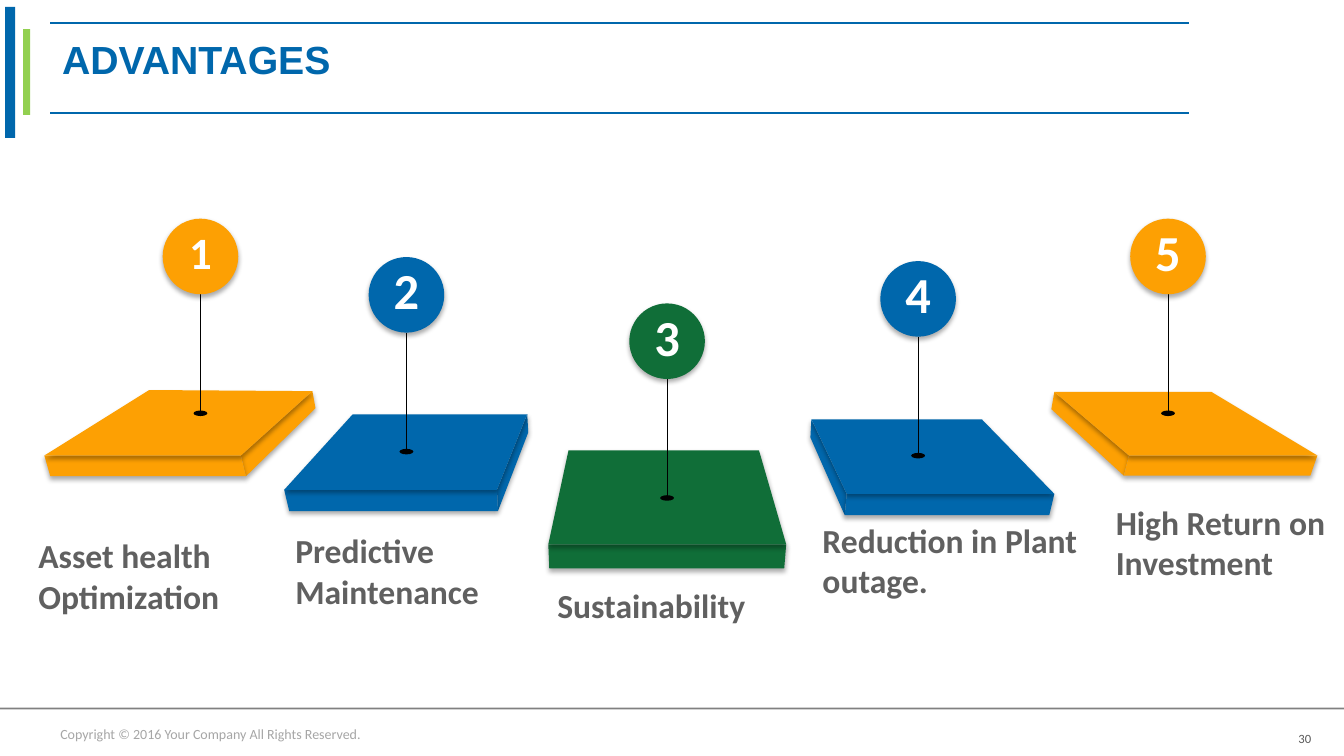
"""Builds a slide with five numbered steps that show the advantages."""
from dataclasses import dataclass

from lxml import etree
from pptx import Presentation
from pptx import util as u
from pptx.dml.color import RGBColor
from pptx.enum import shapes, text
from pptx.oxml import ns

BLUE = RGBColor(0x00, 0x67, 0xAC)
ORANGE = RGBColor(0xFD, 0xA0, 0x03)
GREEN = RGBColor(0x10, 0x6E, 0x38)
LIME = RGBColor(0x92, 0xD0, 0x50)
BLACK = RGBColor(0x00, 0x00, 0x00)
WHITE = RGBColor(0xFF, 0xFF, 0xFF)
RULE_GREY = RGBColor(0x80, 0x80, 0x80)
LABEL_GREY = RGBColor(0x60, 0x60, 0x60)
NUMBER_GREY = RGBColor(0x59, 0x59, 0x59)
FOOTER_GREY = RGBColor(0xA6, 0xA6, 0xA6)

BALL = 54
PIN = 85
LABEL_HEIGHT = 67
LABEL_INSETS = (19.4, 3.6, 5, 5)
EDGES = ((1, 2), (0, 3), (2, 3))


@dataclass
class Step:
    label: str
    label_at: tuple
    color: RGBColor
    ball_at: tuple
    top: tuple
    base: tuple
    size: int = 36


STEPS = (
    Step("Asset health Optimization", (8, 378.7, 182), ORANGE, (143.2, 156.2),
         ((106.6, 278.6), (223.2, 279.4), (172.1, 325.4), (31.7, 325.4)),
         (None, (225.4, 291.6), (175.7, 340.2), (36, 340.2)), 32),
    Step("Predictive Maintenance", (191.5, 375.1, 207), BLUE, (290.3, 183.6),
         ((252, 295.9), (376.6, 295.9), (355, 349.9), (203, 349.9)),
         (None, (377.3, 308.9), (355.7, 365), (206.6, 365))),
    Step("Sustainability", (378.7, 414, 207), GREEN, (476.5, 216.7),
         ((406.1, 321.8), (542.2, 321.8), (561.6, 388.8), (391.7, 388.8)),
         (None, None, (560.2, 406), (392.4, 406))),
    Step("Reduction in Plant outage.", (568.1, 367.9, 207), BLUE, (655.8, 186.5),
         ((579.6, 299.5), (701.3, 299.5), (753.1, 352.8), (604.8, 352.8)),
         ((578.9, 312.5), None, (749.5, 367.9), (603.4, 367.9))),
    Step("High Return on Investment", (777.6, 355, 182), ORANGE, (834.3, 156.2),
         ((753.1, 280), (865.4, 280), (941, 325.4), (806.4, 325.4)),
         ((751, 292.3), None, (936, 339.8), (802.8, 339.8))),
)


class Painter:
    font = "Calibri"

    def __init__(self, page):
        self.page = page

    def set_text(self, frame, words, size, color, insets, bold=False,
                 align=text.PP_ALIGN.LEFT, anchor=text.MSO_ANCHOR.TOP, font=None):
        frame.text = words
        frame.word_wrap = True
        frame.vertical_anchor = anchor
        (frame.margin_left, frame.margin_top,
         frame.margin_right, frame.margin_bottom) = map(u.Pt, insets)
        para = frame.paragraphs[0]
        para.alignment = align
        para.font.name = font or self.font
        para.font.size = u.Pt(size)
        para.font.bold = bold
        para.font.color.rgb = color
        return para

    def title(self, words):
        box = self.page.shapes.title
        box.left, box.top, box.width, box.height = map(u.Pt, (21.6, 16.6, 758, 54.7))
        para = self.set_text(box.text_frame, words, 28, BLUE, (22.8, 3.6, 7.2, 3.6),
                             bold=True, anchor=text.MSO_ANCHOR.MIDDLE, font="Arial")
        para.line_spacing = 0.9

    def textbox(self, words, left, top, width, height, *style, **options):
        box = self.page.shapes.add_textbox(*map(u.Pt, (left, top, width, height)))
        self.set_text(box.text_frame, words, *style, **options)

    def paint(self, shape, color):
        shape.shadow.inherit = False
        shape.fill.solid()
        shape.fill.fore_color.rgb = color
        shape.line.fill.background()

    def cast_shadow(self, shape):
        effects = shape.element.spPr.find(ns.qn("a:effectLst"))
        shadow = etree.SubElement(effects, ns.qn("a:outerShdw"), blurRad=str(u.Pt(3.5)),
                                  dist=str(u.Pt(2.2)), dir="5400000", rotWithShape="0")
        tint = etree.SubElement(shadow, ns.qn("a:srgbClr"), val=str(BLACK))
        etree.SubElement(tint, ns.qn("a:alpha"), val="32000")

    def bar(self, color, left, top, width, height):
        shape = self.page.shapes.add_shape(
            shapes.MSO_SHAPE.RECTANGLE, *map(u.Pt, (left, top, width, height)))
        self.paint(shape, color)

    def line(self, start, end, color, width, dot=False):
        line = self.page.shapes.add_connector(
            shapes.MSO_CONNECTOR.STRAIGHT, *map(u.Pt, (*start, *end)))
        line.line.color.rgb = color
        line.line.width = u.Pt(width)
        properties = line.element.spPr
        etree.SubElement(properties, ns.qn("a:effectLst"))
        if dot:
            etree.SubElement(properties.find(ns.qn("a:ln")), ns.qn("a:tailEnd"),
                             type="oval", w="lg", len="sm")

    def face(self, color, corners):
        points = [tuple(map(u.Pt, corner)) for corner in corners]
        builder = self.page.shapes.build_freeform(*points[0])
        builder.add_line_segments(points[1:], close=True)
        shape = builder.convert_to_shape()
        self.paint(shape, color)
        self.cast_shadow(shape)

    def block(self, step):
        for a, b in EDGES:
            if step.base[a] and step.base[b]:
                self.face(step.color, (step.top[a], step.base[a], step.base[b], step.top[b]))
        self.face(step.color, step.top)

    def ball(self, step, number):
        x, y = step.ball_at
        shape = self.page.shapes.add_shape(
            shapes.MSO_SHAPE.OVAL, *map(u.Pt, (x - BALL / 2, y, BALL, BALL)))
        self.paint(shape, step.color)
        self.cast_shadow(shape)
        self.set_text(shape.text_frame, str(number), step.size, WHITE, (7.2, 0, 7.2, 7.2),
                      bold=True, align=text.PP_ALIGN.CENTER, anchor=text.MSO_ANCHOR.MIDDLE)

    def step(self, step, number):
        x, y = step.ball_at
        self.block(step)
        self.line((x, y + BALL), (x, y + BALL + PIN), BLACK, 0.5, dot=True)
        self.ball(step, number)
        self.textbox(step.label, *step.label_at, LABEL_HEIGHT, 24, LABEL_GREY,
                     LABEL_INSETS, bold=True)


def main():
    deck = Presentation()
    deck.slide_width, deck.slide_height = u.Pt(960), u.Pt(540)
    painter = Painter(deck.slides.add_slide(deck.slide_layouts[5]))

    painter.bar(RULE_GREY, 0, 505.4, 960, 1.4)
    painter.bar(LIME, 16.6, 20.9, 5, 61.2)
    painter.bar(BLUE, 3.6, 5, 7.2, 93.6)
    for y in (16.6, 80.6):
        painter.line((36, y), (849.6, y), BLUE, 1.5)
    painter.title("ADVANTAGES")

    for number, step in enumerate(STEPS, 1):
        painter.step(step, number)

    painter.textbox("Copyright © 2016 Your Company All Rights Reserved.",
                    36, 514.8, 901, 19.4, 10, FOOTER_GREY, (7.2, 3.6, 7.2, 3.6),
                    anchor=text.MSO_ANCHOR.MIDDLE)
    painter.textbox("30", 897, 516.2, 39.6, 18, 9, NUMBER_GREY, (6, 6, 0, 0),
                    align=text.PP_ALIGN.RIGHT)
    deck.save("out.pptx")


if __name__ == "__main__":
    main()
